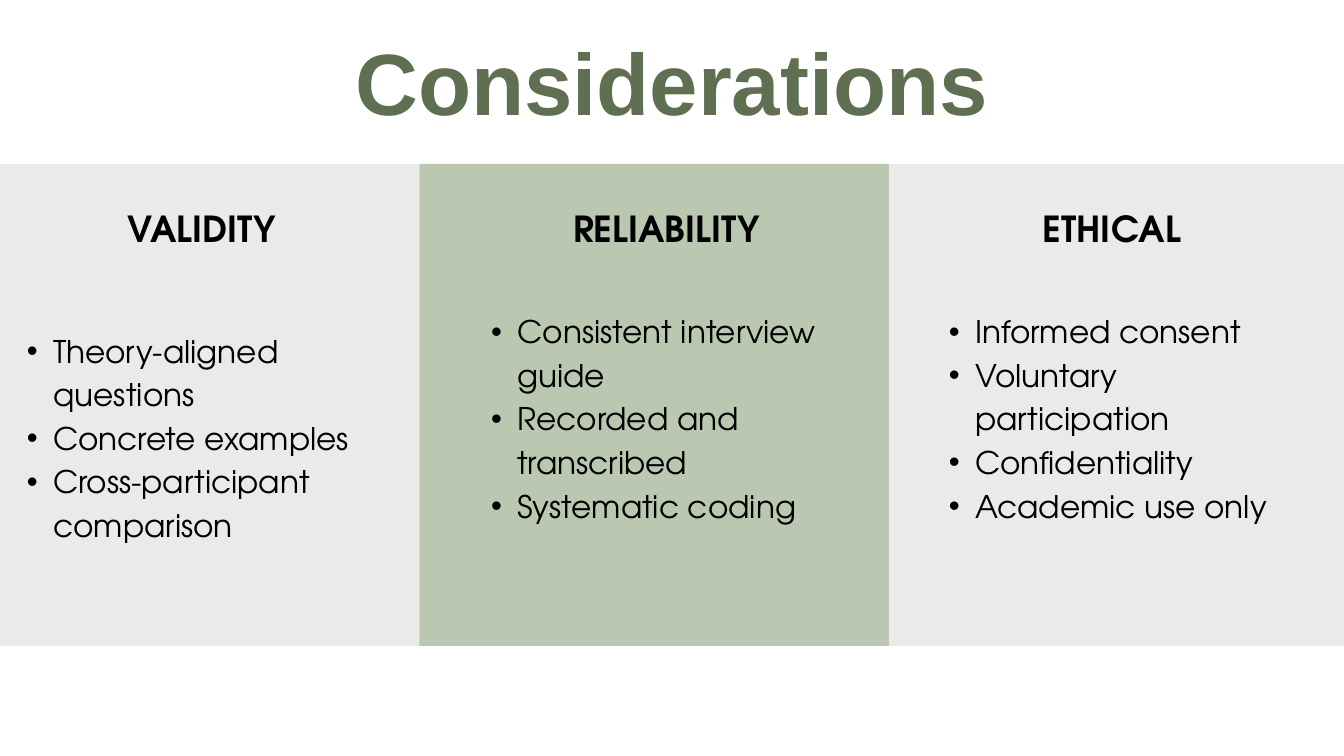
from lxml import etree
from pptx import Presentation
from pptx.dml.color import RGBColor
from pptx.enum.shapes import MSO_SHAPE
from pptx.enum.text import MSO_ANCHOR, MSO_AUTO_SIZE, PP_ALIGN
from pptx.oxml.ns import qn
from pptx.util import Pt

PX = 9144  # EMU; 100 px to the inch
RECTANGLE = MSO_SHAPE.RECTANGLE
TOP = MSO_ANCHOR.TOP
GROW = MSO_AUTO_SIZE.SHAPE_TO_FIT_TEXT
CENTER, LEFT = PP_ALIGN.CENTER, PP_ALIGN.LEFT
TITLE_ONLY = 5

BODY_FONT = "TeX Gyre Adventor"
GREY, SAGE, MOSS, BLACK = "EAEBE9", "BBC8B1", "5F6F52", "000000"

TITLE_STYLE = {"name": "Arial", "size": Pt(93.2), "bold": True}
HEADING_STYLE = {"name": BODY_FONT, "size": Pt(38.4), "bold": True}
BULLET_STYLE = {"name": BODY_FONT, "size": Pt(33.4), "bold": False}

BAND_TOP, BAND_HEIGHT = 244, 717
HEADING_TOP, HEADING_HEIGHT = 297, 80
BULLET_INDENT, BULLET_HANG = 79, 39

# Horizontal spans are (left, width); bullet boxes are (left, top, width, height).
COLUMNS = [
    {"band": (-75, 699), "fill": GREY, "heading": "VALIDITY",
     "heading_span": (190, 245), "bullet_box": (0, 485, 624, 328),
     "bullets": ["Theory-aligned questions", "Concrete examples",
                 "Cross-participant comparison"]},
    {"band": (624, 699), "fill": SAGE, "heading": "RELIABILITY",
     "heading_span": (853, 294), "bullet_box": (691, 456, 578, 328),
     "bullets": ["Consistent interview guide", "Recorded and transcribed",
                 "Systematic coding"]},
    {"band": (1323, 677), "fill": GREY, "heading": "ETHICAL",
     "heading_span": (1552, 294), "bullet_box": (1372, 456, 578, 264),
     "bullets": ["Informed consent", "Voluntary participation",
                 "Confidentiality", "Academic use only"]},
]


def px(*lengths):
    return [length * PX for length in lengths]


def color(hex_value):
    return RGBColor.from_string(hex_value)


def set_attributes(target, values):
    for name, value in values.items():
        setattr(target, name, value)


def format_frame(frame):
    set_attributes(frame, {
        "margin_left": 0, "margin_top": 0, "margin_right": 0,
        "margin_bottom": 0, "word_wrap": True, "auto_size": GROW,
        "vertical_anchor": TOP})


def format_paragraph(para, text, style, text_color, spacing, alignment=LEFT):
    para.text = text
    set_attributes(para, {"alignment": alignment, "line_spacing": Pt(spacing)})
    set_attributes(para.font, style)
    para.font.color.rgb = color(text_color)


def add_title(page, text):
    title = page.shapes.title
    left, top, width, height = px(263, 16, 1474, 175)
    set_attributes(title, {"left": left, "top": top,
                           "width": width, "height": height})
    format_frame(title.text_frame)
    format_paragraph(title.text_frame.paragraphs[0], text, TITLE_STYLE,
                     MOSS, 130.5, CENTER)


def add_band(page, span, fill):
    left, width = span
    band = page.shapes.add_shape(
        RECTANGLE, *px(left, BAND_TOP, width, BAND_HEIGHT))
    band.shadow.inherit = False
    band.fill.solid()
    band.fill.fore_color.rgb = color(fill)
    band.line.fill.background()


def add_text_frame(page, area):
    frame = page.shapes.add_textbox(*px(*area)).text_frame
    format_frame(frame)
    return frame


def add_heading(page, span, text):
    left, width = span
    frame = add_text_frame(page, (left, HEADING_TOP, width, HEADING_HEIGHT))
    format_paragraph(frame.paragraphs[0], text, HEADING_STYLE, BLACK, 53.7)


def set_bullet(para):
    """Give the paragraph a round bullet with a hanging indent."""
    properties = para._p.get_or_add_pPr()
    indent, hang = px(BULLET_INDENT, BULLET_HANG)
    properties.set("marL", str(indent))
    properties.set("indent", str(-hang))
    etree.SubElement(properties, qn("a:buFont")).set("typeface", "Arial")
    etree.SubElement(properties, qn("a:buChar")).set("char", "•")


def add_bullets(page, area, items):
    frame = add_text_frame(page, area)
    for index, item in enumerate(items):
        para = frame.add_paragraph() if index else frame.paragraphs[0]
        para.level = 1
        set_bullet(para)
        format_paragraph(para, item, BULLET_STYLE, BLACK, 46.7)


def main():
    deck = Presentation()
    deck.slide_width, deck.slide_height = px(2000, 1125)
    page = deck.slides.add_slide(deck.slide_layouts[TITLE_ONLY])
    add_title(page, "Considerations")
    for column in COLUMNS:
        add_band(page, column["band"], column["fill"])
        add_heading(page, column["heading_span"], column["heading"])
        add_bullets(page, column["bullet_box"], column["bullets"])
    deck.save("out.pptx")


if __name__ == "__main__":
    main()
